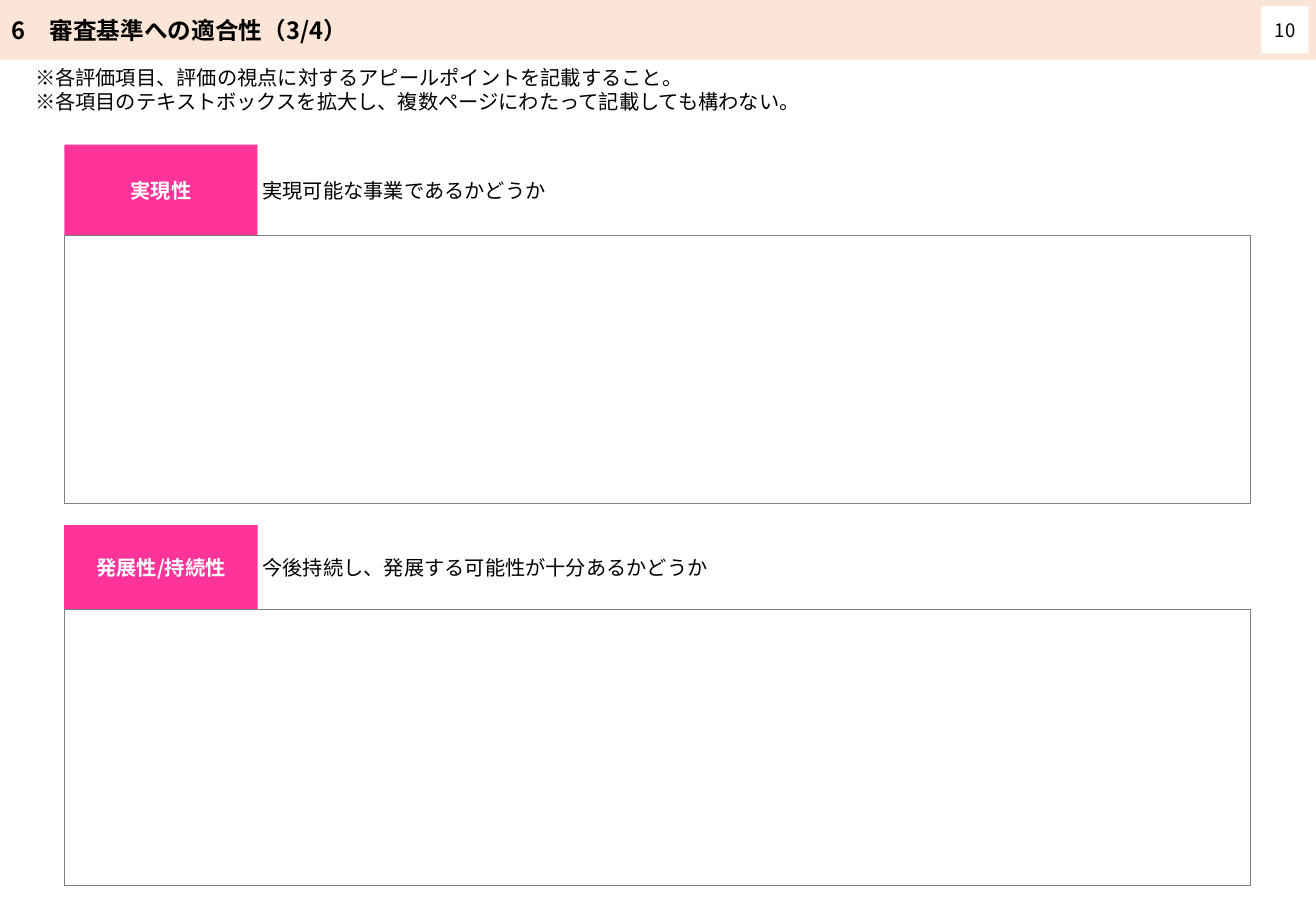
from lxml.etree import SubElement
from pptx import Presentation
from pptx.dml.color import RGBColor
from pptx.enum.shapes import MSO_SHAPE
from pptx.enum.text import MSO_ANCHOR, MSO_AUTO_SIZE, PP_ALIGN
from pptx.oxml import parse_xml
from pptx.oxml.ns import nsdecls, qn
from pptx.util import Inches, Pt

TITLE = "6　審査基準への適合性（3/4）"
PAGE_NUMBER = "10"
NOTES = [
    "※各評価項目、評価の視点に対するアピールポイントを記載すること。",
    "※各項目のテキストボックスを拡大し、複数ページにわたって記載しても構わない。",
]
# name, viewpoint, top, heading height, answer height
CRITERIA = [
    ("実現性", "実現可能な事業であるかどうか", 1.19, 0.75, 2.2),
    ("発展性/持続性", "今後持続し、発展する可能性が十分あるかどうか", 4.33, 0.69, 2.27),
]

FONT = "Noto Sans CJK JP"
COLORS = {"band": "FBE5D6", "white": "FFFFFF", "text": "000000",
          "label": "FF3399", "border": "808080"}
SLIDE_WIDTH, SLIDE_HEIGHT = 10.83, 7.5
BAND_HEIGHT = 0.49
LEFT, LABEL_WIDTH, VIEWPOINT_WIDTH, ANSWER_WIDTH = 0.53, 1.59, 8.18, 9.76


def color(name):
    return RGBColor.from_string(COLORS[name])


def write(frame, lines, size, ink="text", bold=False, align=PP_ALIGN.LEFT, after=0):
    frame.word_wrap = True
    frame.text = "\n".join(lines)
    for para in frame.paragraphs:
        para.alignment = align
        para.space_after = Pt(after)
        font = para.font
        font.name, font.size, font.bold = FONT, Pt(size), bold
        font.color.rgb = color(ink)
        for span in para.runs:
            # East Asian glyphs take their typeface from a:ea
            SubElement(span.font._element, qn("a:ea"), typeface=FONT)


def add_box(shapes, left, top, width, height, fill, line=None, line_width=1):
    box = shapes.add_shape(MSO_SHAPE.RECTANGLE, Inches(left), Inches(top),
                           Inches(width), Inches(height))
    box.shadow.inherit = False
    box.fill.solid()
    box.fill.fore_color.rgb = color(fill)
    if line:
        box.line.color.rgb = color(line)
        box.line.width = Pt(line_width)
    else:
        box.line.fill.background()
    box.text_frame.vertical_anchor = MSO_ANCHOR.MIDDLE
    return box


def set_margins(frame, margin):
    frame.margin_left = frame.margin_right = Inches(margin)
    frame.margin_top = frame.margin_bottom = Inches(margin)


def add_answer(page, top, height):
    """Add the one-cell table in which the applicant writes."""
    table = page.shapes.add_table(1, 1, Inches(LEFT), Inches(top),
                                  Inches(ANSWER_WIDTH), Inches(height)).table
    table.first_row = table.horz_banding = False
    cell = table.cell(0, 0)
    cell.fill.background()
    properties = cell._tc.get_or_add_tcPr()
    for position, side in enumerate(("lnL", "lnR", "lnT", "lnB")):
        properties.insert(position, parse_xml(
            f'<a:{side} {nsdecls("a")} w="{Pt(0.5)}"><a:solidFill>'
            f'<a:srgbClr val="{COLORS["border"]}"/></a:solidFill></a:{side}>'))


def add_criterion(page, name, viewpoint, top, heading_height, answer_height):
    heading = page.shapes.add_group_shape().shapes
    label_line = "label" if "/" in name else None
    label = add_box(heading, LEFT, top, LABEL_WIDTH, heading_height,
                    "label", label_line, 0.75)
    question = add_box(heading, LEFT + LABEL_WIDTH, top, VIEWPOINT_WIDTH,
                       heading_height, "white")
    for box in (label, question):
        set_margins(box.text_frame, 0.04)
    write(label.text_frame, [name], 12, "white", True, PP_ALIGN.CENTER, after=4)
    write(question.text_frame, [viewpoint], 12, after=4)
    add_answer(page, top + heading_height, answer_height)


def main():
    deck = Presentation()
    deck.slide_width, deck.slide_height = Inches(SLIDE_WIDTH), Inches(SLIDE_HEIGHT)
    page = deck.slides.add_slide(deck.slide_layouts[6])

    band = add_box(page.shapes, 0, 0, SLIDE_WIDTH, BAND_HEIGHT, "band", "band")
    write(band.text_frame, [TITLE], 14, bold=True)
    number = add_box(page.shapes, 10.38, 0.05, 0.39, 0.39, "white")
    set_margins(number.text_frame, 0)
    write(number.text_frame, [PAGE_NUMBER], 11, align=PP_ALIGN.CENTER)

    notes = page.shapes.add_textbox(Inches(0.19), Inches(BAND_HEIGHT),
                                    Inches(10.46), Inches(0.5))
    write(notes.text_frame, NOTES, 12)
    notes.text_frame.auto_size = MSO_AUTO_SIZE.SHAPE_TO_FIT_TEXT

    for criterion in CRITERIA:
        add_criterion(page, *criterion)
    deck.save("out.pptx")


if __name__ == "__main__":
    main()
